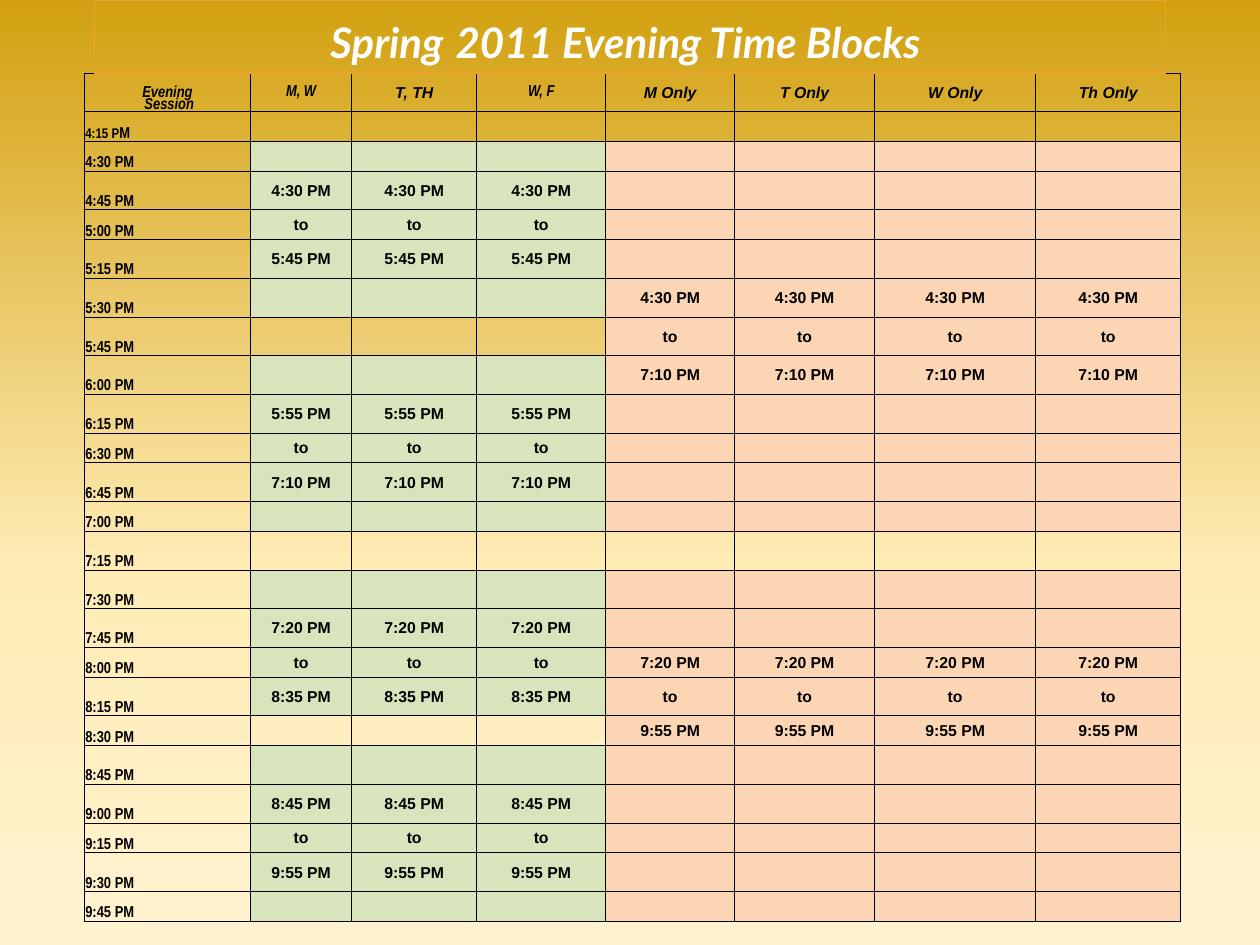
import pptx
import pptx.dml.color
import pptx.enum.text
import pptx.oxml.ns
import pptx.util
from lxml import etree

Cm, Pt = pptx.util.Cm, pptx.util.Pt
RGB = pptx.dml.color.RGBColor.from_string
ALIGN, ANCHOR = pptx.enum.text.PP_ALIGN, pptx.enum.text.MSO_ANCHOR
qn = pptx.oxml.ns.qn

COLORS = {"text": "000000", "title": "FFFFFF", "title_line": "F0A22E",
          "pairs": "D7E4BC", "single": "FCD5B4"}
BACKGROUND = [(0, "D2A010"), (60, "FFECB5"), (100, "FFF2CF")]
SANS, NARROW = "Arial", "Arial Narrow"

TITLE_RUNS = [("Spring", 24), (" ", 32), ("2011 Evening Time Blocks ", 24)]
# Header lines, font, column width in cm
COLUMNS = [(["Evening", " Session"], NARROW, 3.35), (["M, W"], NARROW, 2.04),
           (["T, TH"], SANS, 2.52), (["W, F"], NARROW, 2.6), (["M Only"], SANS, 2.6),
           (["T Only"], SANS, 2.82), (["W Only"], SANS, 3.25), (["Th Only"], SANS, 2.92)]
FIRST_MINUTE, STEP, SLOTS = 4 * 60 + 15, 15, 23
SHORT_ROWS = {1, 2, 4, 10, 12, 16, 18, 21, 23}
SHORT, TALL = 0.6, 0.78

# Columns of each day group, shaded row spans, and (first text row, start, end)
DAY_GROUPS = [
    {"color": "pairs", "columns": range(1, 4),
     "shaded": [(2, 6), (8, 12), (14, 17), (19, 23)],
     "blocks": [(3, "4:30 PM", "5:45 PM"), (9, "5:55 PM", "7:10 PM"),
                (15, "7:20 PM", "8:35 PM"), (20, "8:45 PM", "9:55 PM")]},
    {"color": "single", "columns": range(4, 8),
     "shaded": [(2, 12), (14, 23)],
     "blocks": [(6, "4:30 PM", "7:10 PM"), (16, "7:20 PM", "9:55 PM")]},
]


def add_run(paragraph, text, size, font, color, italic=False):
    run = paragraph.add_run()
    run.text = text
    run.font.size, run.font.name = Pt(size), font
    run.font.bold, run.font.italic = True, italic
    run.font.color.rgb = RGB(color)


def write(cell, text, font=SANS, size=9, italic=False):
    """Add a run to the cell's first paragraph."""
    add_run(cell.text_frame.paragraphs[0], text, size, font, COLORS["text"], italic)


def paint_background(slide):
    fill = slide.background.fill
    fill.gradient()
    fill.gradient_angle = 270
    stops = slide.element.find(".//" + qn("a:gsLst"))
    for stop in list(stops):
        stops.remove(stop)
    for percent, color in BACKGROUND:
        stop = etree.SubElement(stops, qn("a:gs"), pos=str(percent * 1000))
        etree.SubElement(stop, qn("a:srgbClr"), val=color)


def add_title(slide):
    title = slide.shapes.title
    title.left, title.top, title.width, title.height = Cm(1.9), Cm(0), Cm(21.6), Cm(1.47)
    title.line.color.rgb = RGB(COLORS["title_line"])
    title.line.width = Pt(0.75)
    frame = title.text_frame
    frame.word_wrap = True
    frame.auto_size = pptx.enum.text.MSO_AUTO_SIZE.NONE
    frame.vertical_anchor = ANCHOR.MIDDLE
    heading = frame.paragraphs[0]
    heading.alignment = ALIGN.CENTER
    for text, size in TITLE_RUNS:
        add_run(heading, text, size, "Lato", COLORS["title"], True)
    return title


def format_cell(cell, is_label):
    """Set insets, alignment, no fill and thin borders."""
    cell.margin_left = cell.margin_right = cell.margin_top = Cm(0.02)
    cell.margin_bottom = 0
    cell.vertical_anchor = ANCHOR.BOTTOM if is_label else ANCHOR.MIDDLE
    cell.text_frame.paragraphs[0].alignment = ALIGN.LEFT if is_label else ALIGN.CENTER
    cell.fill.background()
    properties = cell.fill._xPr
    for position, side in enumerate(("a:lnL", "a:lnR", "a:lnT", "a:lnB")):
        border = etree.Element(qn(side), w=str(Pt(0.5)))
        solid = etree.SubElement(border, qn("a:solidFill"))
        etree.SubElement(solid, qn("a:srgbClr"), val=COLORS["text"])
        properties.insert(position, border)


def keep_empty_cell_small(cell):
    paragraph = cell.text_frame.paragraphs[0]
    if not paragraph.runs:
        etree.SubElement(paragraph._p, qn("a:endParaRPr"), sz="900")


def write_headers(schedule):
    for column, (lines, font, width) in enumerate(COLUMNS):
        schedule.columns[column].width = Cm(width)
        cell = schedule.cell(0, column)
        for number, line in enumerate(lines):
            frame = cell.text_frame
            paragraph = frame.add_paragraph() if number else frame.paragraphs[0]
            paragraph.alignment = ALIGN.CENTER
            paragraph.line_spacing = 0.8 if len(lines) > 1 else 1.0
            add_run(paragraph, line, 9, font, COLORS["text"], True)


def write_times(schedule):
    for slot in range(SLOTS):
        hour, minute = divmod(FIRST_MINUTE + slot * STEP, 60)
        label = f"{hour}:{minute:02d} PM"
        cell = schedule.cell(slot + 1, 0)
        if slot == 0:
            write(cell, label[:-1], NARROW, 8)
            write(cell, label[-1], NARROW)
        else:
            write(cell, label, NARROW)


def write_blocks(schedule, group):
    for column in group["columns"]:
        for first, last in group["shaded"]:
            for row in range(first, last + 1):
                fill = schedule.cell(row, column).fill
                fill.solid()
                fill.fore_color.rgb = RGB(COLORS[group["color"]])
        for first, start, end in group["blocks"]:
            for row, text in enumerate((start, "to", end), first):
                write(schedule.cell(row, column), text)


def add_schedule(slide):
    heights = [SHORT if row in SHORT_ROWS else TALL for row in range(SLOTS + 1)]
    frame = slide.shapes.add_table(
        len(heights), len(COLUMNS), Cm(1.7), Cm(1.47),
        Cm(sum(width for _, _, width in COLUMNS)), Cm(sum(heights)))
    schedule = frame.table
    schedule.first_row = schedule.horz_banding = False
    for row, height in enumerate(heights):
        schedule.rows[row].height = Cm(height)
        for column in range(len(COLUMNS)):
            format_cell(schedule.cell(row, column), column == 0)
    write_headers(schedule)
    write_times(schedule)
    for group in DAY_GROUPS:
        write_blocks(schedule, group)
    for cell in schedule.iter_cells():
        keep_empty_cell_small(cell)
    return frame


def main():
    deck = pptx.Presentation()
    deck.slide_width, deck.slide_height = Cm(25.4), Cm(19.05)
    slide = deck.slides.add_slide(deck.slide_layouts[5])
    paint_background(slide)
    title = add_title(slide)
    schedule = add_schedule(slide)
    title.element.addprevious(schedule._element)  # title lies over the table's top edge
    deck.save("out.pptx")


if __name__ == "__main__":
    main()
